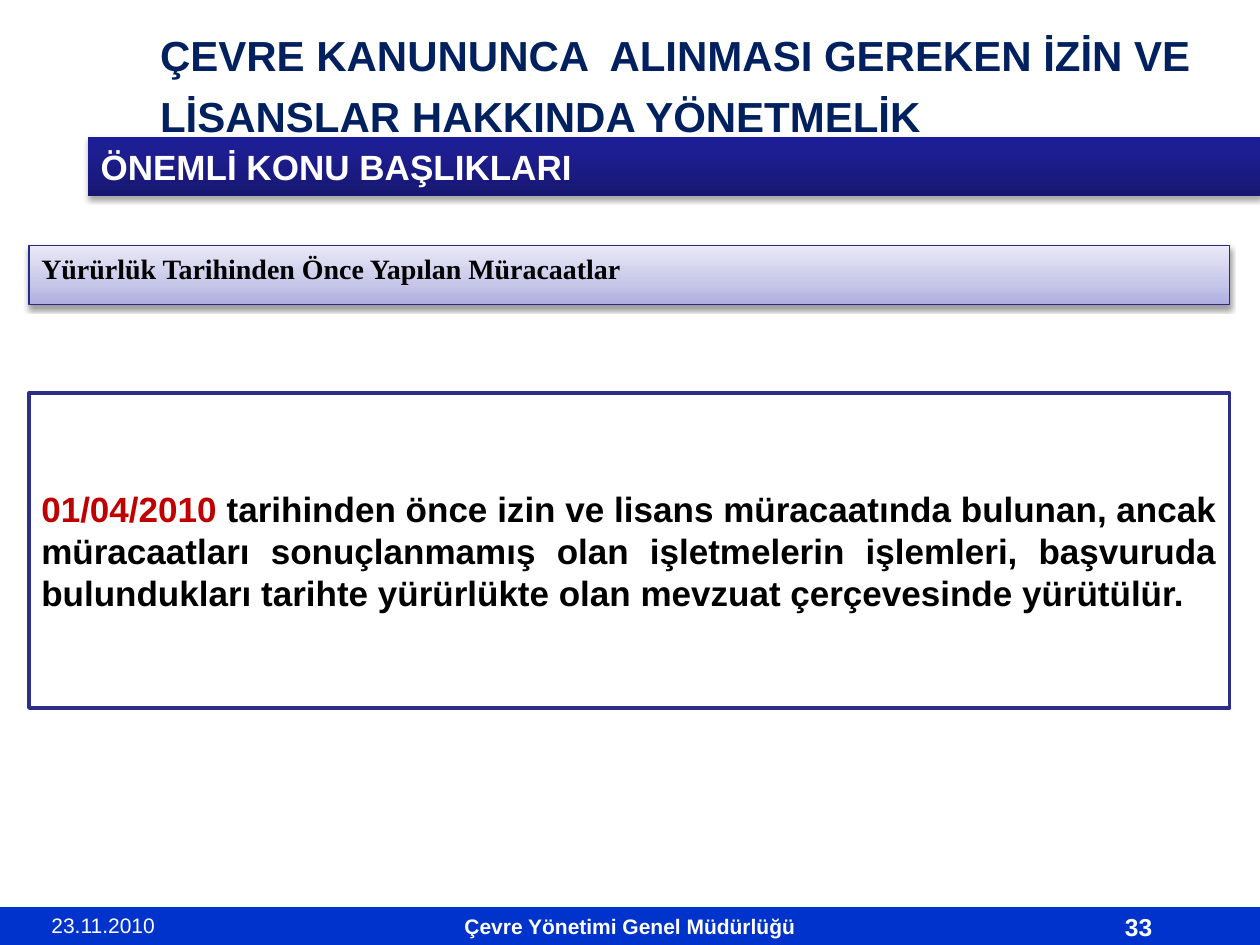
from lxml import etree
from pptx import Presentation
from pptx.dml.color import RGBColor
from pptx.enum.shapes import MSO_SHAPE
from pptx.enum.text import MSO_ANCHOR, PP_ALIGN
from pptx.oxml import parse_xml
from pptx.oxml.ns import qn
from pptx.util import Inches, Pt

RECT = MSO_SHAPE.RECTANGLE
TOP, MID = MSO_ANCHOR.TOP, MSO_ANCHOR.MIDDLE
LEFT, CENTER, FULL = PP_ALIGN.LEFT, PP_ALIGN.CENTER, PP_ALIGN.JUSTIFY
NS = "http://schemas.openxmlformats.org/drawingml/2006/main"
WHITE, BLACK, NAVY, RED = "FFFFFF", "000000", "002060", "C00000"

prs = Presentation()
prs.slide_width, prs.slide_height = Inches(10), Inches(7.5)
slide = prs.slides.add_slide(prs.slide_layouts[5])
shapes = slide.shapes


def color(code):
    return RGBColor.from_string(code)


def write(shape, place, lines, size, ink, bold=True, align=LEFT, anchor=TOP, face="Arial"):
    """Place a shape by percent of the slide and set its text, a list of runs per line."""
    x, y, w, h = place
    shape.left, shape.width = [int(prs.slide_width * v / 100) for v in (x, w)]
    shape.top, shape.height = [int(prs.slide_height * v / 100) for v in (y, h)]
    frame = shape.text_frame
    frame.word_wrap, frame.vertical_anchor = True, anchor
    for i, runs in enumerate(lines):
        para = frame.add_paragraph() if i else frame.paragraphs[0]
        para.alignment = align
        para.space_before = Pt(6 if i else 0)
        font = para.font
        font.name, font.size, font.bold = face, Pt(size), bold
        font.color.rgb = color(ink)
        for text, tint in runs:
            run = para.add_run()
            run.text = text
            run.font.color.rgb = color(tint)


# Title
title = shapes.title
write(title, (11.7, 2.5, 85.9, 13.2),
      [[("ÇEVRE KANUNUNCA  ALINMASI GEREKEN İZİN VE", NAVY)],
       [("LİSANSLAR HAKKINDA YÖNETMELİK", NAVY)]], 24, NAVY)

# Filled boxes: place, text, size, ink, align, anchor, face, fill, line, shadow
bars = [
    ((0, 96, 100, 4), [("Çevre Yönetimi Genel Müdürlüğü", WHITE)],
     12, WHITE, CENTER, MID, "Arial", "0033CC", None, None),
    ((7, 14.53, 93, 6.27), [("ÖNEMLİ KONU BAŞLIKLARI", WHITE)],
     20, WHITE, LEFT, MID, "Arial",
     [(0, "171771"), (80, "1E1E93"), (100, "1C1C96")], None, (35, 1.8)),
    ((2.3, 26, 95.3, 6.27), [("Yürürlük Tarihinden Önce Yapılan Müracaatlar", BLACK)],
     16, BLACK, FULL, TOP, "Times New Roman",
     [(0, "ADADE1"), (35, "C6C6E9"), (100, "E9E9F7")], ("2A2A89", 0.75), (38, 1.6)),
    ((2.3, 41.6, 95.3, 33.33),
     [("01/04/2010", RED),
      (" tarihinden önce izin ve lisans müracaatında bulunan, ancak müracaatları "
       "sonuçlanmamış olan işletmelerin işlemleri, başvuruda bulundukları tarihte "
       "yürürlükte olan mevzuat çerçevesinde yürütülür.", BLACK)],
     20, BLACK, FULL, MID, "Arial", WHITE, ("2D2D8A", 2), None),
]
for place, runs, size, ink, align, anchor, face, fill, line, shade in bars:
    bar = shapes.add_shape(RECT, 0, 0, 0, 0)
    write(bar, place, [runs], size, ink, True, align, anchor, face)
    props = bar.fill._xPr
    if isinstance(fill, str):
        bar.fill.solid()
        bar.fill.fore_color.rgb = color(fill)
    else:
        bar.fill.gradient()
        bar.fill.gradient_angle = 90
        stops = props.find(qn("a:gradFill")).find(qn("a:gsLst"))
        for stop in list(stops):
            stops.remove(stop)
        for pos, code in fill:
            stop = etree.SubElement(stops, qn("a:gs"), pos=str(pos * 1000))
            etree.SubElement(stop, qn("a:srgbClr"), val=code)
    if line:
        bar.line.color.rgb = color(line[0])
        bar.line.width = Pt(line[1])
    else:
        bar.line.fill.background()
    bar.shadow.inherit = False
    if shade:
        alpha, dist = shade
        props.find(qn("a:effectLst")).append(parse_xml(
            f'<a:outerShdw xmlns:a="{NS}" blurRad="{Pt(3.1)}" dist="{Pt(dist)}" '
            f'dir="5400000" rotWithShape="0"><a:srgbClr val="{BLACK}">'
            f'<a:alpha val="{alpha * 1000}"/></a:srgbClr></a:outerShdw>'))

# Date and page number on the footer bar
for x, w, text, size, bold in [(3.1, 21.9, "23.11.2010", 12, False),
                               (88.3, 7.8, "33", 14, True)]:
    box = shapes.add_textbox(0, 0, 0, 0)
    write(box, (x, 95.87, w, 4.13), [[(text, WHITE)]], size, WHITE, bold)

prs.save("out.pptx")
